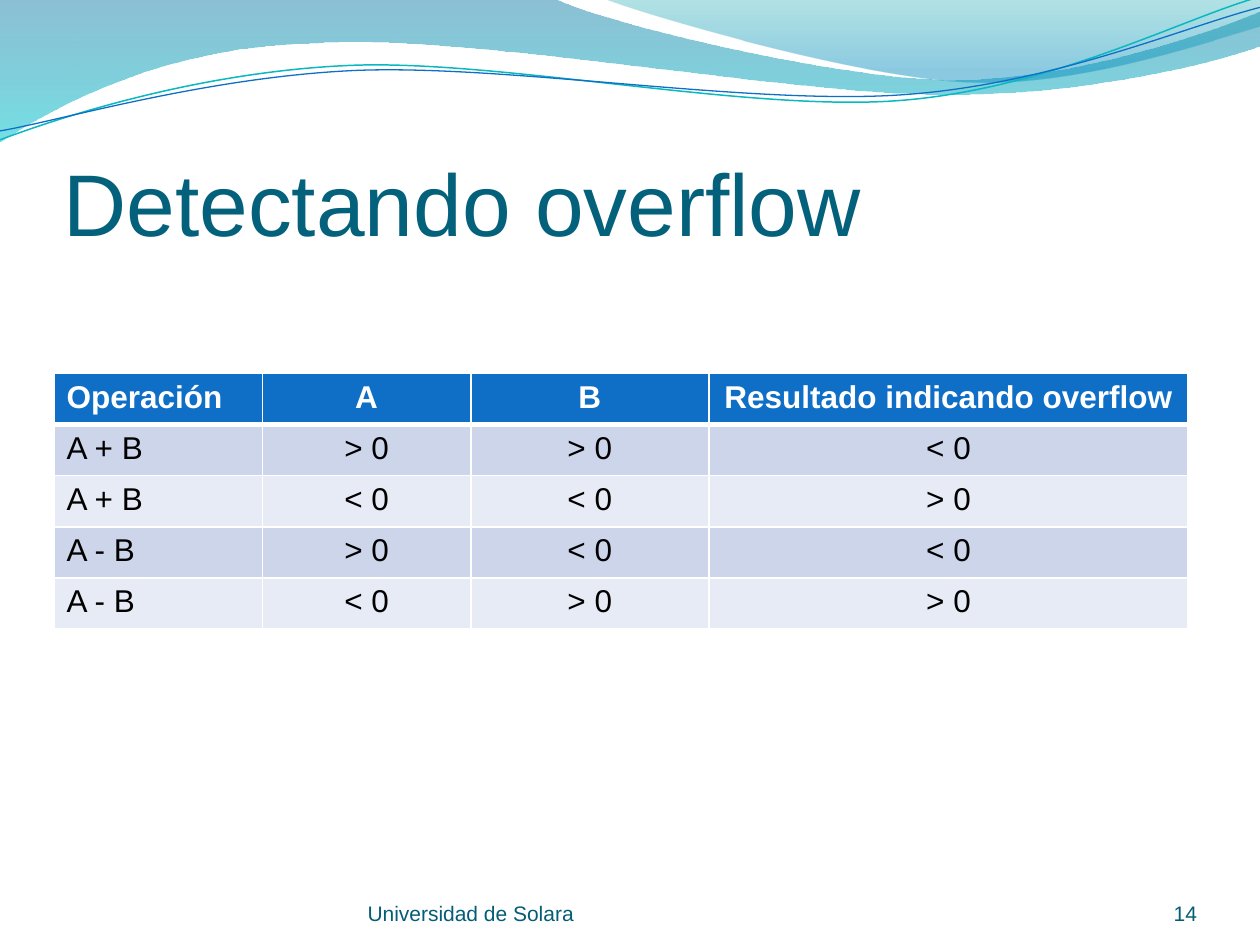
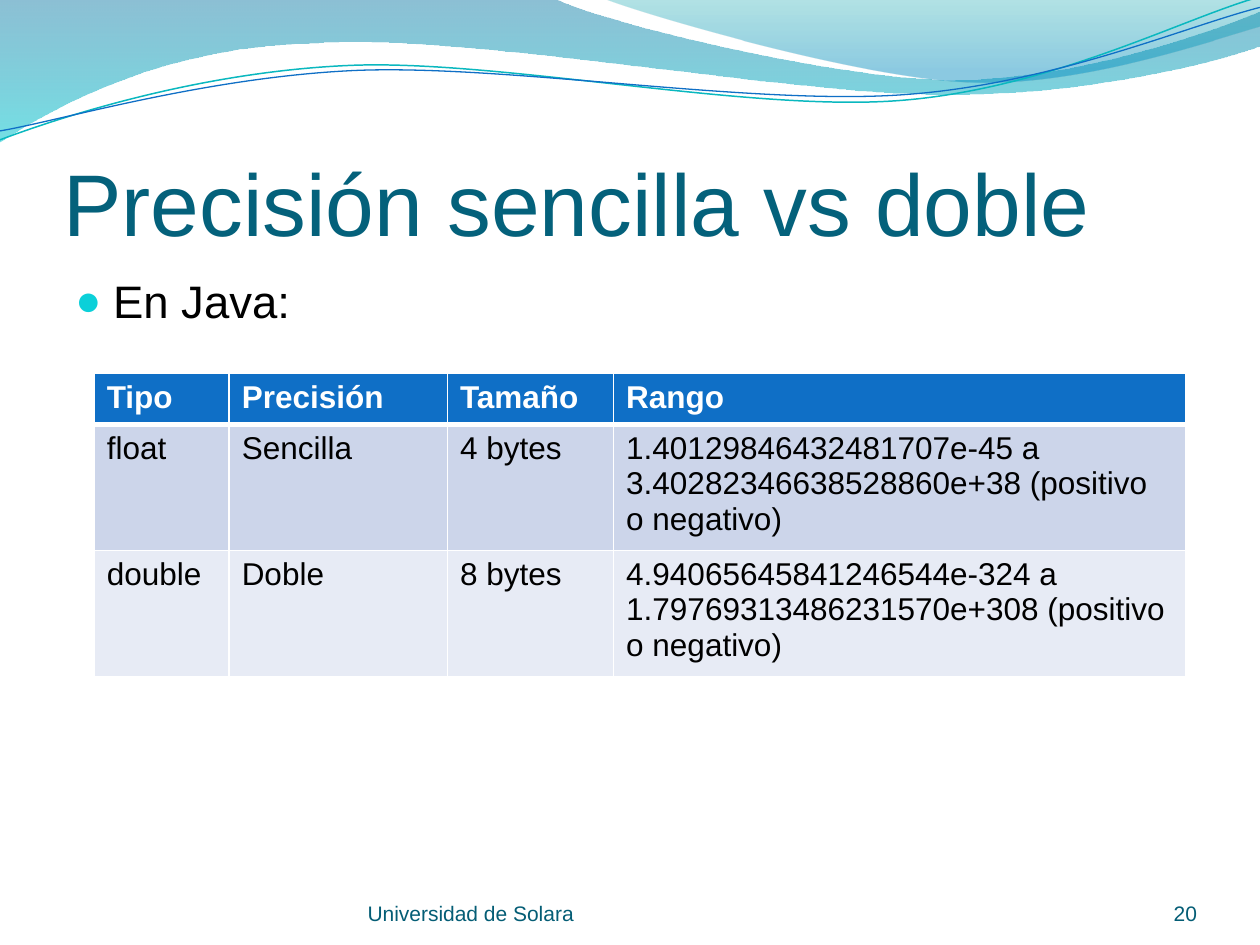
import dataclasses
import typing

import pptx
import pptx.dml.color
import pptx.enum.text
import pptx.oxml.ns
import pptx.slide
import pptx.text.text
import pptx.util
from lxml import etree

Cm = pptx.util.Cm
Pt = pptx.util.Pt
qn = pptx.oxml.ns.qn
Align = pptx.enum.text.PP_ALIGN
Anchor = pptx.enum.text.MSO_ANCHOR

Point = tuple[float, float]


@dataclasses.dataclass(frozen=True)
class Theme:
    font: str = "Arial"
    title: str = "04617B"
    footer: str = "045D75"
    text: str = "000000"
    white: str = "FFFFFF"
    header: str = "0F6FC6"
    row_bands: tuple[str, str] = ("CCD5EA", "E7EBF5")
    bullet: str = "0BD0D9"
    teal_line: str = "0AB8BF"
    title_size: float = 50
    body_size: float = 26
    table_size: float = 18
    footer_size: float = 12


THEME = Theme()


class Stop(typing.NamedTuple):
    position: float
    color: str
    opacity: int


@dataclasses.dataclass(frozen=True)
class Wave:
    """An outline in cm; a step of one point is a line, of three a Bézier curve."""
    start: Point
    steps: tuple[tuple[Point, ...], ...]
    gradient: tuple[Stop, ...] = ()
    line_color: str = ""
    line_width: float = 0


@dataclasses.dataclass(frozen=True)
class Label:
    """A text box in cm, with insets as left, top, right, bottom."""
    text: str
    box: tuple[float, float, float, float]
    size: float
    color: str
    align: Align = Align.LEFT
    anchor: Anchor = Anchor.BOTTOM
    insets: tuple[float, float, float, float] = (0, 0, 0, 0)


@dataclasses.dataclass(frozen=True)
class Grid:
    left: float
    columns: tuple[float, ...]
    rows: tuple[tuple[str, ...], ...]
    centered_from: int


@dataclasses.dataclass(frozen=True)
class Page:
    title: str
    number: int
    grid: Grid
    bullet: str = ""


WAVES = (
    Wave((0, 0), (
        ((11.18, -0.03),),
        ((12.09, 0.43), (16.87, 1.6), (19.25, 1.6)),
        ((21.67, 1.6), (24.33, 0.66), (25.4, 0.23)),
        ((25.43, 0.91),),
        ((24.97, 1.12), (22.1, 1.93), (18.95, 1.9)),
        ((15.8, 1.9), (9.7, 0.71), (6.53, 0.86)),
        ((3.28, 0.91), (1.17, 2.11), (-0.03, 2.87)),
    ), gradient=(Stop(0, "0074A1", 45), Stop(1, "00C6CF", 55))),
    Wave((12.17, -0.03), (
        ((12.93, 0.28), (17.32, 1.57), (19.53, 1.65)),
        ((21.74, 1.75), (24.41, 0.81), (25.4, 0.53)),
        ((25.4, 0),),
    ), gradient=(Stop(0, "00A1A9", 30), Stop(0.8, "008BBF", 45))),
    Wave((0, 2.82), (
        ((1.22, 2.36), (4.01, 1.45), (7.04, 1.32)),
        ((10.03, 1.19), (15.06, 2.26), (18.11, 2.03)),
        ((21.16, 1.8), (23.83, 0.38), (25.35, -0.05)),
    ), line_color=THEME.teal_line, line_width=0.85),
    Wave((0, 2.64), (
        ((1.19, 2.44), (4.17, 1.55), (7.19, 1.42)),
        ((10.24, 1.3), (15.16, 2.13), (18.21, 1.91)),
        ((21.23, 1.7), (23.9, 0.53), (25.4, 0.15)),
    ), line_color=THEME.header, line_width=0.75),
)

TABLE_TOP = 7.53
ROW_HEIGHT = 1.03

PAGES = (
    Page("Detectando overflow", 14, Grid(1.09, (4.2, 4.2, 4.8, 9.66), (
        ("Operación", "A", "B", "Resultado indicando overflow"),
        ("A + B", "> 0", "> 0", "< 0"),
        ("A + B", "< 0", "< 0", "> 0"),
        ("A - B", "> 0", "< 0", "< 0"),
        ("A - B", "< 0", "> 0", "> 0"),
    ), centered_from=1)),
    Page("Precisión sencilla vs doble", 20, Grid(1.9, (2.72, 4.4, 3.35, 11.53), (
        ("Tipo", "Precisión", "Tamaño", "Rango"),
        ("float", "Sencilla", "4 bytes",
         "1.40129846432481707e-45 a 3.40282346638528860e+38 (positivo o negativo)"),
        ("double", "Doble", "8 bytes",
         "4.94065645841246544e-324 a 1.79769313486231570e+308 (positivo o negativo)"),
    ), centered_from=4), bullet="En Java:"),
)


def rgb(color: str) -> pptx.dml.color.RGBColor:
    return pptx.dml.color.RGBColor.from_string(color)


def style_paragraph(paragraph: pptx.text.text._Paragraph, size: float, color: str,
                    align: Align, bold: bool = False) -> None:
    paragraph.alignment = align
    for run in paragraph.runs:
        run.font.name = THEME.font
        run.font.size = Pt(size)
        run.font.bold = bold
        run.font.color.rgb = rgb(color)


def bend_segments(outline: typing.Any, steps: tuple[tuple[Point, ...], ...]) -> None:
    """Join the three line segments of each curved step into one Bézier curve."""
    segments = iter(list(outline.iter(qn("a:lnTo"))))
    for step in steps:
        first, *others = [next(segments) for _ in step]
        if others:
            first.tag = qn("a:cubicBezTo")
        for segment in others:
            first.append(segment[0])
            segment.getparent().remove(segment)


def draw_wave(slide: pptx.slide.Slide, wave: Wave) -> None:
    start, *rest = [(Cm(x), Cm(y)) for x, y in sum(wave.steps, (wave.start,))]
    builder = slide.shapes.build_freeform(*start, scale=1.0)
    builder.add_line_segments(rest, close=bool(wave.gradient))
    shape = builder.convert_to_shape()
    bend_segments(shape.element.spPr, wave.steps)
    shape.shadow.inherit = False
    if not wave.gradient:
        shape.fill.background()
        shape.line.color.rgb = rgb(wave.line_color)
        shape.line.width = Pt(wave.line_width)
        return
    shape.line.fill.background()
    shape.fill.gradient()
    shape.fill.gradient_angle = 270
    for target, stop in zip(shape.fill.gradient_stops, wave.gradient):
        target.position = stop.position
        target.color.rgb = rgb(stop.color)
    colors = shape.element.spPr.iter(qn("a:srgbClr"))
    for color, stop in zip(colors, wave.gradient):
        etree.SubElement(color, qn("a:alpha"), val=str(stop.opacity * 1000))


def draw_label(slide: pptx.slide.Slide, label: Label) -> pptx.text.text._Paragraph:
    frame = slide.shapes.add_textbox(*map(Cm, label.box)).text_frame
    frame.word_wrap = True
    frame.vertical_anchor = label.anchor
    (frame.margin_left, frame.margin_top,
     frame.margin_right, frame.margin_bottom) = map(Cm, label.insets)
    frame.text = label.text
    paragraph = frame.paragraphs[0]
    style_paragraph(paragraph, label.size, label.color, label.align)
    return paragraph


def add_bullet(paragraph: pptx.text.text._Paragraph) -> None:
    paragraph.space_before = Pt(5.2)
    properties = paragraph._p.get_or_add_pPr()
    indent = Cm(0.76)
    properties.set("marL", str(indent))
    properties.set("indent", str(-indent))
    color = etree.SubElement(properties, qn("a:buClr"))
    etree.SubElement(color, qn("a:srgbClr"), val=THEME.bullet)
    etree.SubElement(properties, qn("a:buSzPct"), val="95000")
    etree.SubElement(properties, qn("a:buFont"), typeface=THEME.font)
    etree.SubElement(properties, qn("a:buChar"), char="●")


def add_borders(cell: typing.Any, top: float, bottom: float) -> None:
    properties = cell._tc.get_or_add_tcPr()
    for side, width in (("L", 1), ("R", 1), ("T", top), ("B", bottom)):
        line = etree.SubElement(properties, qn(f"a:ln{side}"), w=str(Pt(width)))
        fill = etree.SubElement(line, qn("a:solidFill"))
        etree.SubElement(fill, qn("a:srgbClr"), val=THEME.white)


def draw_grid(slide: pptx.slide.Slide, grid: Grid) -> None:
    table = slide.shapes.add_table(
        len(grid.rows), len(grid.columns), Cm(grid.left), Cm(TABLE_TOP),
        Cm(sum(grid.columns)), Cm(ROW_HEIGHT * len(grid.rows))).table
    for column, width in zip(table.columns, grid.columns):
        column.width = Cm(width)
    for row in table.rows:
        row.height = Cm(ROW_HEIGHT)
    for r, values in enumerate(grid.rows):
        is_header = r == 0
        fill = THEME.header if is_header else THEME.row_bands[(r - 1) % 2]
        for c, value in enumerate(values):
            cell = table.cell(r, c)
            add_borders(cell, top=3 if r == 1 else 1, bottom=3 if is_header else 1)
            cell.fill.solid()
            cell.fill.fore_color.rgb = rgb(fill)
            cell.text_frame.text = value
            style_paragraph(
                cell.text_frame.paragraphs[0], THEME.table_size,
                THEME.white if is_header else THEME.text,
                Align.CENTER if c >= grid.centered_from else Align.LEFT, is_header)


def draw_page(slide: pptx.slide.Slide, page: Page) -> None:
    for wave in WAVES:
        draw_wave(slide, wave)
    draw_label(slide, Label(page.title, (1.28, 1.96, 22.86, 3.16), THEME.title_size,
                            THEME.title, insets=(0, 0.13, 0, 0)))
    if page.bullet:
        add_bullet(draw_label(slide, Label(
            page.bullet, (1.27, 5.38, 22.86, 12.19), THEME.body_size, THEME.text,
            anchor=Anchor.TOP, insets=(0.25, 0.13, 0.25, 0.13))))
    draw_label(slide, Label("Universidad de Solara", (7.41, 17.65, 9.32, 1.02),
                            THEME.footer_size, THEME.footer))
    draw_label(slide, Label(str(page.number), (22.02, 17.65, 2.11, 1.02),
                            THEME.footer_size, THEME.footer, Align.RIGHT))
    draw_grid(slide, page.grid)


def main() -> None:
    deck = pptx.Presentation()
    deck.slide_width, deck.slide_height = Cm(25.4), Cm(19.05)
    blank = deck.slide_layouts[6]
    for page in PAGES:
        draw_page(deck.slides.add_slide(blank), page)
    deck.save("out.pptx")


if __name__ == "__main__":
    main()
